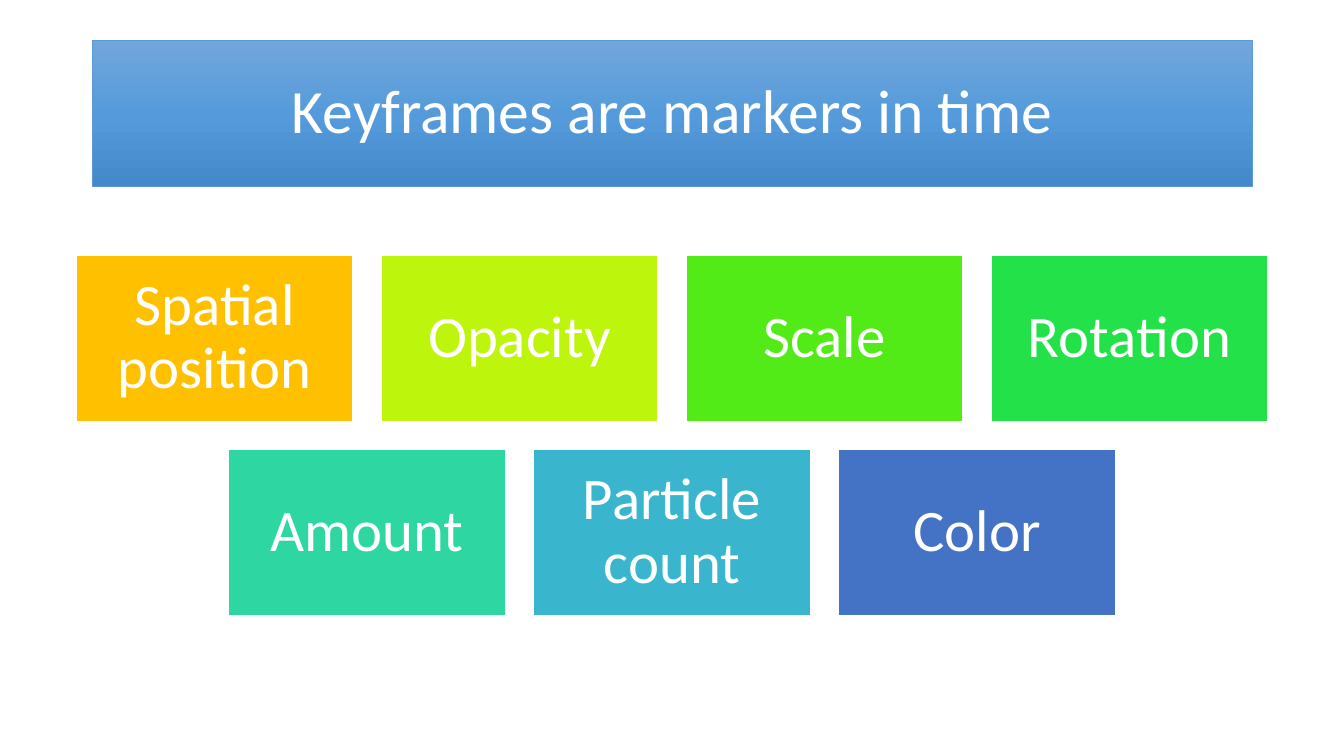
from copy import deepcopy

from pptx import Presentation
from pptx.dml.color import RGBColor
from pptx.enum.shapes import MSO_SHAPE
from pptx.enum.text import MSO_ANCHOR, MSO_AUTO_SIZE, PP_ALIGN
from pptx.oxml.ns import qn
from pptx.util import Inches, Pt

RECT = MSO_SHAPE.RECTANGLE
MIDDLE = MSO_ANCHOR.MIDDLE
CENTER = PP_ALIGN.CENTER
NO_FIT = MSO_AUTO_SIZE.NONE
TITLE_ONLY = 5

TITLE = "Keyframes are markers in time"
ROWS = [
    [("Spatial position", "FFC000"), ("Opacity", "BEF50C"),
     ("Scale", "53EB17"), ("Rotation", "23E148")],
    [("Amount", "2ED7A1"), ("Particle count", "39B6CE"), ("Color", "4472C4")],
]

THEME = {
    "font": "Calibri",
    "text": "FFFFFF",
    "title_size": 44,
    "tile_size": 42,
    "title_line": ("5B9BD5", 0.5),
    "tile_line": ("FFFFFF", 1),
    "title_fill": [(0, "71A6DB"), (0.5, "559BDB"), (1, "448ACA")],
}

WIDE, HIGH = 13.33, 7.5
TITLE_BOX = (0.92, 0.4, 11.5, 1.45)
TILE_W, TILE_H = 2.75, 1.65
GAP = TILE_W / 10
TOP = 2.53


def rgb(code):
    return RGBColor.from_string(code)


def apply(target, values):
    for name, value in values.items():
        setattr(target, name, value)


def place(shape, box):
    names = ("left", "top", "width", "height")
    apply(shape, dict(zip(names, map(Inches, box))))


def outline(shape, line):
    color, width = line
    shape.line.color.rgb = rgb(color)
    shape.line.width = Pt(width)


def write(shape, text, size, inset):
    frame = shape.text_frame
    frame.text = text
    sides = ("left", "right", "top", "bottom")
    apply(frame, {f"margin_{side}": Inches(gap) for side, gap in zip(sides, inset)})
    apply(frame, {"word_wrap": True, "auto_size": NO_FIT, "vertical_anchor": MIDDLE})
    para = frame.paragraphs[0]
    apply(para, {"alignment": CENTER, "line_spacing": 0.9})
    font = para.runs[0].font
    apply(font, {"name": THEME["font"], "size": Pt(size)})
    font.color.rgb = rgb(THEME["text"])


def shade(shape, stops):
    """Fill from top to bottom through all the stops."""
    fill = shape.fill
    fill.gradient()
    fill.gradient_angle = 270
    marks = shape.element.spPr.find(".//" + qn("a:gsLst"))
    while len(marks) < len(stops):
        marks.append(deepcopy(marks[-1]))
    for mark, (place_at, color) in zip(fill.gradient_stops, stops):
        mark.position = place_at
        mark.color.rgb = rgb(color)


def add_title(slide):
    title = slide.shapes.title
    place(title, TITLE_BOX)
    shade(title, THEME["title_fill"])
    outline(title, THEME["title_line"])
    write(title, TITLE, THEME["title_size"], (0.1, 0.1, 0.05, 0.05))


def add_tile(slide, text, color, left, top):
    tile = slide.shapes.add_shape(RECT, 0, 0, 0, 0)
    place(tile, (left, top, TILE_W, TILE_H))
    tile.shadow.inherit = False
    tile.fill.solid()
    tile.fill.fore_color.rgb = rgb(color)
    outline(tile, THEME["tile_line"])
    write(tile, text, THEME["tile_size"], (0.17,) * 4)


def main():
    deck = Presentation()
    apply(deck, {"slide_width": Inches(WIDE), "slide_height": Inches(HIGH)})
    slide = deck.slides.add_slide(deck.slide_layouts[TITLE_ONLY])
    add_title(slide)
    for row, tiles in enumerate(ROWS):
        span = len(tiles) * (TILE_W + GAP) - GAP
        start = (WIDE - span) / 2
        for col, (text, color) in enumerate(tiles):
            add_tile(slide, text, color,
                     start + col * (TILE_W + GAP), TOP + row * (TILE_H + GAP))
    deck.save("out.pptx")


if __name__ == "__main__":
    main()
